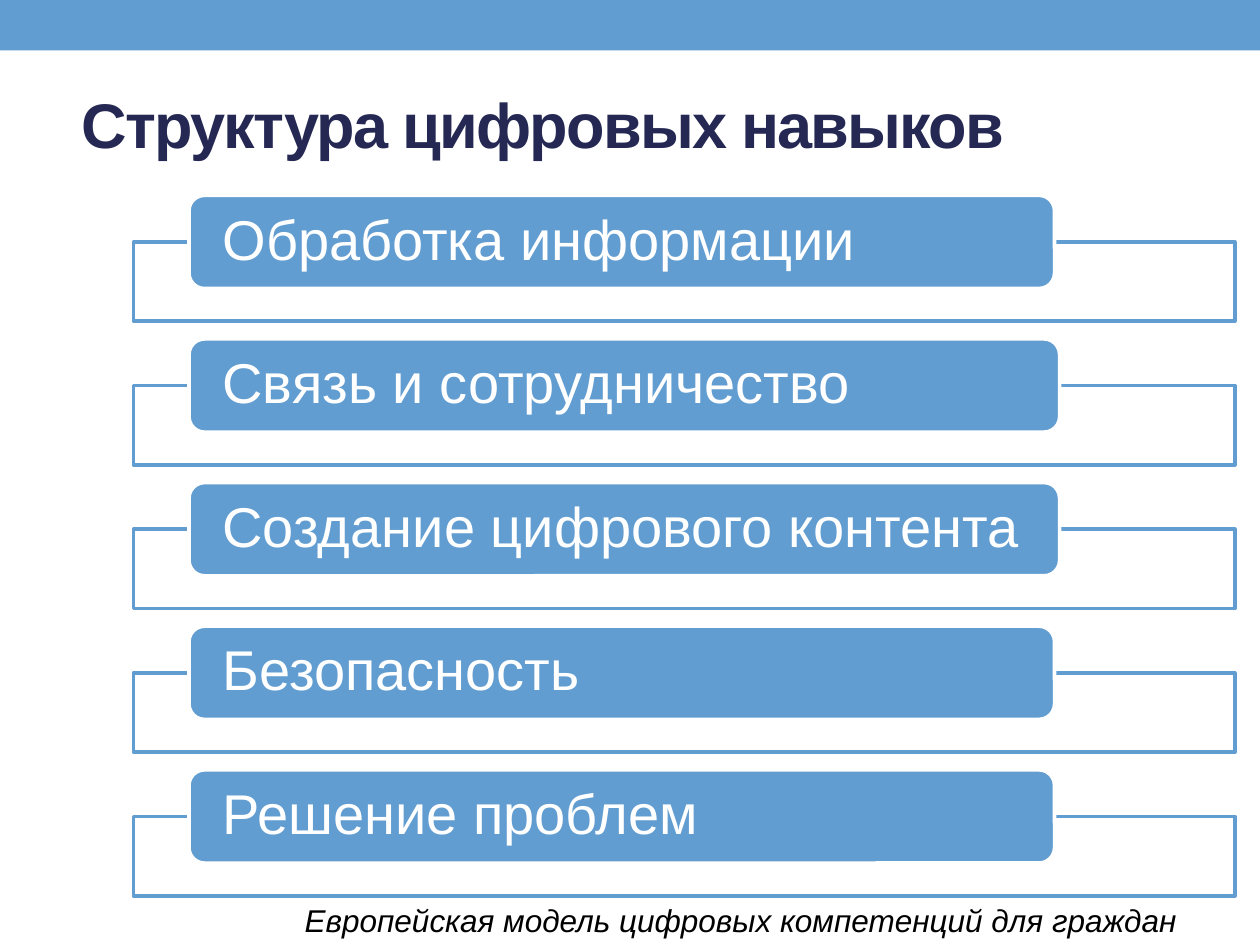
from dataclasses import dataclass

from lxml.etree import SubElement
from pptx import Presentation
from pptx.dml.color import RGBColor
from pptx.enum.shapes import MSO_SHAPE
from pptx.enum.text import MSO_ANCHOR, PP_ALIGN
from pptx.oxml.ns import qn
from pptx.shapes.autoshape import Shape
from pptx.slide import Slide
from pptx.text.text import TextFrame
from pptx.util import Inches, Pt


@dataclass(frozen=True)
class Theme:
    blue: str = "629DD1"
    navy: str = "242852"
    white: str = "FFFFFF"
    black: str = "000000"
    font: str = "Arial"
    title_size: int = 36
    label_size: int = 32
    caption_size: int = 18
    outline: float = 2.08


@dataclass(frozen=True)
class Area:
    """A rectangle in percent of the slide's width and height."""
    left: float
    top: float
    width: float
    height: float

    def lengths(self) -> tuple[int, int, int, int]:
        return (int(SLIDE_WIDTH * self.left / 100), int(SLIDE_HEIGHT * self.top / 100),
                int(SLIDE_WIDTH * self.width / 100), int(SLIDE_HEIGHT * self.height / 100))


@dataclass(frozen=True)
class Skill:
    name: str
    label_width: float = 68.7


THEME = Theme()
SLIDE_WIDTH, SLIDE_HEIGHT = Inches(10), Inches(7.5)
ROW_STEP = 15.2
SKILLS = (
    Skill("Обработка информации"),
    Skill("Связь и сотрудничество", 69.1),
    Skill("Создание цифрового контента", 69.1),
    Skill("Безопасность"),
    Skill("Решение проблем"),
)


def add_block(page: Slide, kind: MSO_SHAPE, area: Area, fill: str,
              outline: str | None = None) -> Shape:
    block = page.shapes.add_shape(kind, *area.lengths())
    block.shadow.inherit = False
    block.fill.solid()
    block.fill.fore_color.rgb = RGBColor.from_string(fill)
    if outline is None:
        block.line.fill.background()
    else:
        block.line.color.rgb = RGBColor.from_string(outline)
        block.line.width = Pt(THEME.outline)
    return block


def write(frame: TextFrame, text: str, size: int, color: str, bold: bool = False,
          italic: bool = False, tracking: int = 0, line_spacing: float = 1.0) -> None:
    para = frame.paragraphs[0]
    para.alignment = PP_ALIGN.LEFT
    para.line_spacing = line_spacing
    span = para.add_run()
    span.text = text
    span.font.name = THEME.font
    span.font.size = Pt(size)
    span.font.bold = bold
    span.font.italic = italic
    span.font.color.rgb = RGBColor.from_string(color)
    if tracking:
        span.font._element.set("spc", str(tracking * 100))


def add_text(page: Slide, area: Area, anchor: MSO_ANCHOR) -> TextFrame:
    frame = page.shapes.add_textbox(*area.lengths()).text_frame
    frame.word_wrap = True
    frame.vertical_anchor = anchor
    return frame


def add_skill(page: Slide, row: int, skill: Skill) -> None:
    offset = row * ROW_STEP

    # Outlined frame behind the label
    back = add_block(page, MSO_SHAPE.RECTANGLE, Area(10.6, 25.6 + offset, 87.4, 8.4),
                     THEME.white, THEME.blue)
    color = back.fill._xPr.find(qn("a:solidFill"))[0]
    SubElement(color, qn("a:alpha"), val="90000")

    # Rounded label, with a narrow right margin so that each name fits on one line
    label = add_block(page, MSO_SHAPE.ROUNDED_RECTANGLE,
                      Area(15, 20.67 + offset, skill.label_width, 9.87),
                      THEME.blue, THEME.white)
    frame = label.text_frame
    frame.word_wrap = True
    frame.vertical_anchor = MSO_ANCHOR.MIDDLE
    frame.margin_left, frame.margin_right = Inches(0.23), Inches(0.1)
    frame.margin_top = frame.margin_bottom = 0
    write(frame, skill.name, THEME.label_size, THEME.white, line_spacing=0.9)


def main() -> None:
    deck = Presentation()
    deck.slide_width, deck.slide_height = SLIDE_WIDTH, SLIDE_HEIGHT
    page = deck.slides.add_slide(deck.slide_layouts[6])

    # Banner and title
    add_block(page, MSO_SHAPE.RECTANGLE, Area(0, 0, 100, 5.33), THEME.blue)
    title = add_text(page, Area(5.5, 5.87, 90, 14.4), MSO_ANCHOR.MIDDLE)
    write(title, "Структура цифровых навыков", THEME.title_size, THEME.navy,
          bold=True, tracking=-1)

    # List of skills
    for row, skill in enumerate(SKILLS):
        add_skill(page, row, skill)

    # Caption
    caption = add_text(page, Area(23.2, 94.67, 84.1, 5.33), MSO_ANCHOR.TOP)
    write(caption, "Европейская модель цифровых компетенций для граждан",
          THEME.caption_size, THEME.black, italic=True)

    deck.save("out.pptx")


if __name__ == "__main__":
    main()
